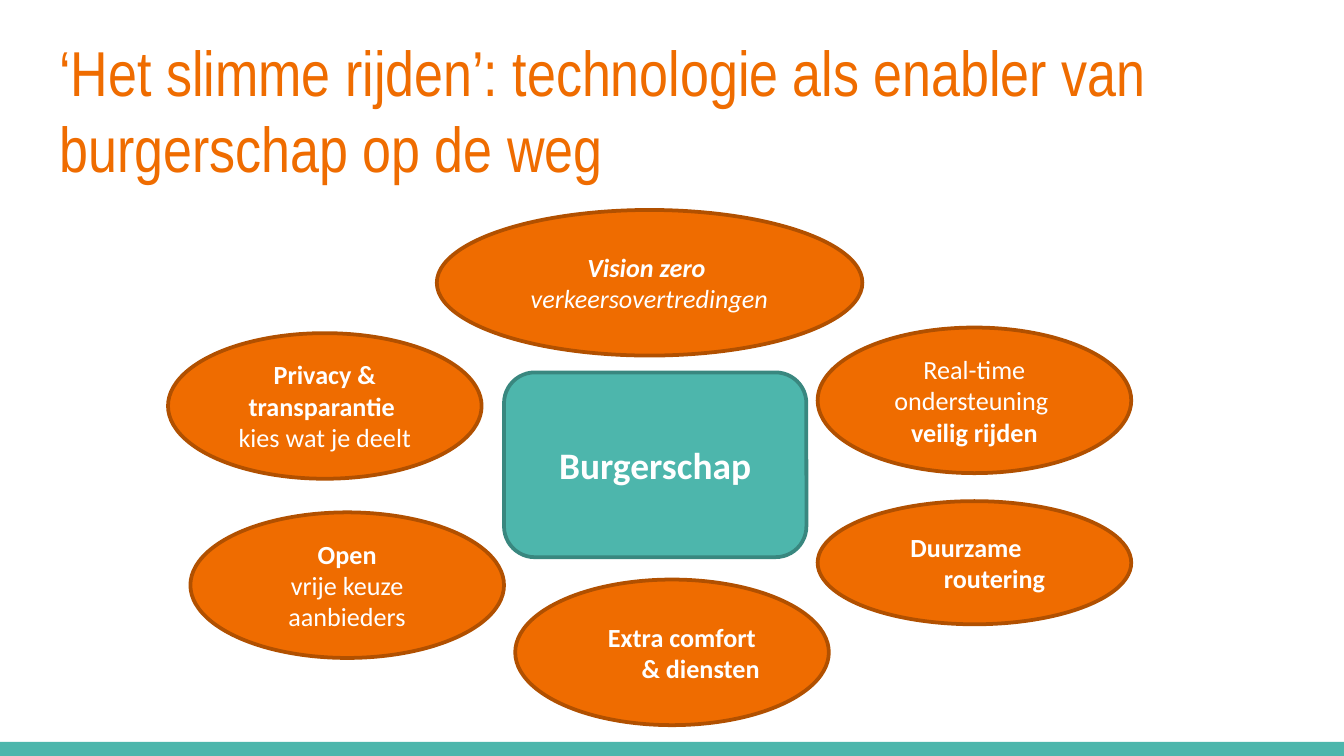
import copy

import pptx
import pptx.dml.color
import pptx.enum.shapes
import pptx.enum.text
import pptx.oxml.ns
import pptx.util

SHAPE = pptx.enum.shapes.MSO_SHAPE
ALIGN = pptx.enum.text.PP_ALIGN
ANCHOR = pptx.enum.text.MSO_ANCHOR
ORANGE, BROWN = "EF6C00", "B15000"
TEAL, DARK_TEAL = "4DB6AC", "39877F"
WHITE = "FFFFFF"


def px(length):
    return pptx.util.Emu(length * 9525)


def color(value):
    return pptx.dml.color.RGBColor.from_string(value)


class SlideBuilder:
    heading_font = "Arial Narrow"
    body_font = "Calibri"

    def __init__(self, slide):
        self.slide = slide

    def format_span(self, span, font, size, fill, bold=False, italic=False):
        span.font.name = font
        span.font.size = pptx.util.Pt(size)
        span.font.color.rgb = color(fill)
        span.font.bold = bold
        span.font.italic = italic

    def title(self, bounds, text):
        box = self.slide.shapes.add_textbox(*map(px, bounds))
        frame = box.text_frame
        frame.word_wrap = True
        frame.margin_left = frame.margin_right = pptx.util.Inches(0.1)
        frame.margin_top = frame.margin_bottom = pptx.util.Inches(0.1)
        frame.text = text
        self.format_span(frame.paragraphs[0].runs[0], self.heading_font, 34, ORANGE)

    def shape(self, kind, bounds, fill, outline=None):
        shape = self.slide.shapes.add_shape(kind, *map(px, bounds))
        shape.shadow.inherit = False
        shape.fill.solid()
        shape.fill.fore_color.rgb = color(fill)
        if outline:
            shape.line.color.rgb = color(outline)
            shape.line.width = pptx.util.Pt(2)
        else:
            shape.line.fill.background()
        return shape

    def label(self, shape, text, styles, size=14, hanging=False):
        frame = shape.text_frame
        frame.word_wrap = True
        frame.vertical_anchor = ANCHOR.MIDDLE
        para = frame.paragraphs[0]
        para.text = text
        para.alignment = ALIGN.LEFT if hanging else ALIGN.CENTER
        if hanging:
            properties = para._p.get_or_add_pPr()
            properties.set("marL", str(px(48)))
            properties.set("indent", str(px(-24)))
        for span, style in zip(para.runs, styles):
            self.format_span(span, self.body_font, size, WHITE, "b" in style, "i" in style)
        for line_break in para._p.findall(pptx.oxml.ns.qn("a:br")):
            line_break.append(copy.deepcopy(para.runs[0].font._element))

    def bubble(self, bounds, text, styles, hanging=False):
        oval = self.shape(SHAPE.OVAL, bounds, ORANGE, BROWN)
        self.label(oval, text, styles, hanging=hanging)

    def core(self, bounds, text):
        block = self.shape(SHAPE.ROUNDED_RECTANGLE, bounds, TEAL, DARK_TEAL)
        self.label(block, text, ["b"], size=20)


def main():
    deck = pptx.Presentation()
    deck.slide_width, deck.slide_height = px(960), px(540)
    page = SlideBuilder(deck.slides.add_slide(deck.slide_layouts[6]))

    page.shape(SHAPE.RECTANGLE, (0, 530, 960, 10), TEAL)
    page.title(
        (33, 14, 895, 74),
        "‘Het slimme rijden’: technologie als enabler van burgerschap op de weg",
    )

    width, height = 224, 104
    page.bubble((368, 414, width, height), "Extra comfort & diensten", ["b"], hanging=True)
    page.bubble((584, 234, width, height), "Real-time ondersteuning \vveilig rijden", ["", "b"])
    page.bubble((136, 366, width, height), "Open\vvrije keuze aanbieders", ["b", ""])
    page.bubble((312, 150, 304, height), "Vision zero \vverkeersovertredingen", ["bi", "i"])
    page.bubble((120, 238, width, height), "Privacy & transparantie \vkies wat je deelt", ["b", ""])
    page.core((360, 266, 216, 132), "Burgerschap")
    page.bubble((584, 358, width, 88), "Duurzame routering", ["b"], hanging=True)

    deck.save("out.pptx")


if __name__ == "__main__":
    main()
